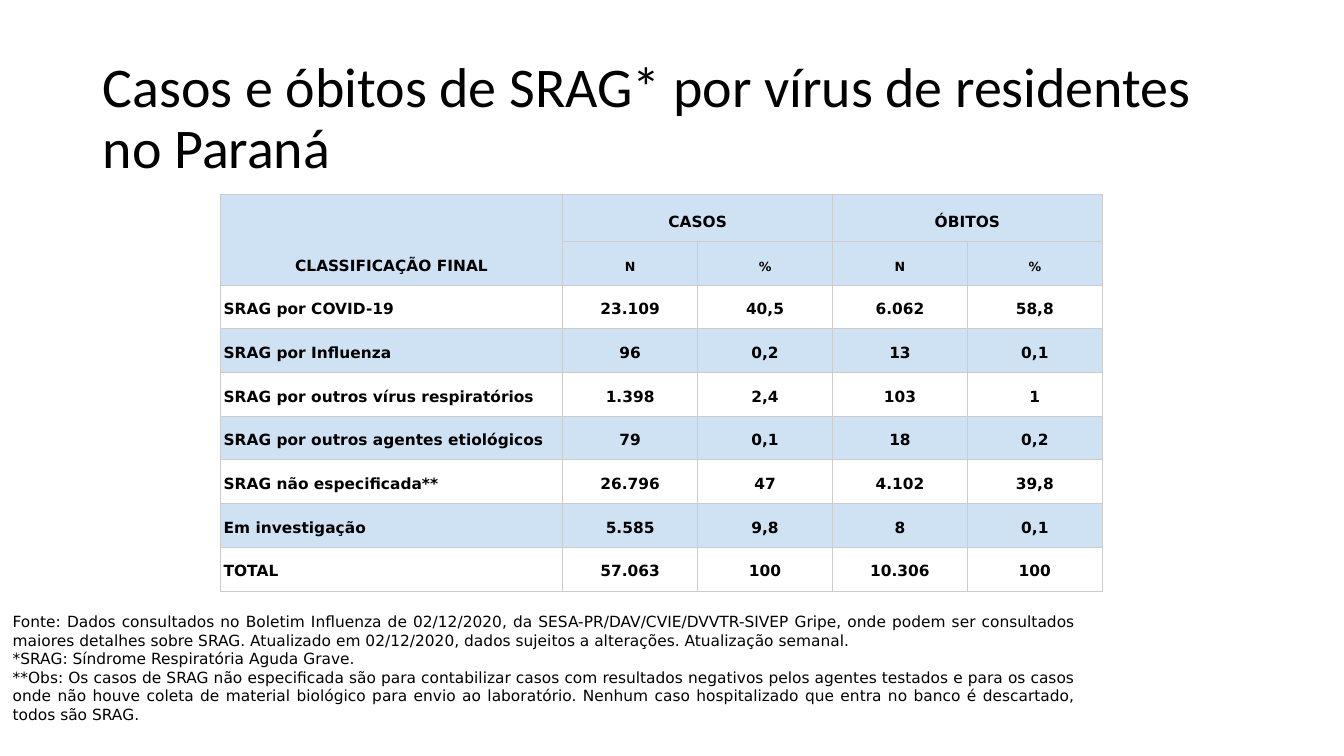
from lxml import etree
from pptx import Presentation
from pptx.dml.color import RGBColor
from pptx.enum.text import MSO_ANCHOR, PP_ALIGN
from pptx.oxml.ns import qn
from pptx.util import Pt

LEFT, CENTER, JUSTIFY = PP_ALIGN.LEFT, PP_ALIGN.CENTER, PP_ALIGN.JUSTIFY
MIDDLE, BOTTOM = MSO_ANCHOR.MIDDLE, MSO_ANCHOR.BOTTOM

EMU_PER_PX = 9525  # 96 px to the inch
COLORS = {"text": "000000", "band": "CFE2F3", "border": "CCCCCC"}
TITLE_FONT, BODY_FONT = "Calibri", "DejaVu Sans"

TITLE = "Casos e óbitos de SRAG* por vírus de residentes no Paraná"
HEADERS = [
    ["CLASSIFICAÇÃO FINAL", "CASOS", "", "ÓBITOS", ""],
    ["", "N", "%", "N", "%"],
]
CASES = [
    ["SRAG por COVID-19", "23.109", "40,5", "6.062", "58,8"],
    ["SRAG por Influenza", "96", "0,2", "13", "0,1"],
    ["SRAG por outros vírus respiratórios", "1.398", "2,4", "103", "1"],
    ["SRAG por outros agentes etiológicos", "79", "0,1", "18", "0,2"],
    ["SRAG não especificada**", "26.796", "47", "4.102", "39,8"],
    ["Em investigação", "5.585", "9,8", "8", "0,1"],
    ["TOTAL", "57.063", "100", "10.306", "100"],
]
NOTES = [
    "Fonte: Dados consultados no Boletim Influenza de 02/12/2020, da "
    "SESA-PR/DAV/CVIE/DVVTR-SIVEP Gripe, onde podem ser consultados maiores "
    "detalhes sobre SRAG. Atualizado em 02/12/2020, dados sujeitos a "
    "alterações. Atualização semanal.",
    "*SRAG: Síndrome Respiratória Aguda Grave.",
    "**Obs: Os casos de SRAG não especificada são para contabilizar casos com "
    "resultados negativos pelos agentes testados e para os casos onde não houve "
    "coleta de material biológico para envio ao laboratório. Nenhum caso "
    "hospitalizado que entra no banco é descartado, todos são SRAG.",
]


def px(n):
    return n * EMU_PER_PX


def write(tf, paragraphs, size=11, font=BODY_FONT, bold=False, align=LEFT, spacing=1.0):
    tf.word_wrap = True
    for i, text in enumerate(paragraphs):
        p = tf.add_paragraph() if i else tf.paragraphs[0]
        p.alignment = align
        p.line_spacing = spacing
        r = p.add_run()
        r.text = text
        r.font.size = Pt(size)
        r.font.name = font
        r.font.bold = bold
        r.font.color.rgb = RGBColor.from_string(COLORS["text"])


def set_margins(target, side, end):
    target.margin_left = target.margin_right = px(side)
    target.margin_top = target.margin_bottom = px(end)


def add_text(slide, box, paragraphs, anchor, margins, **text_format):
    tf = slide.shapes.add_textbox(*map(px, box)).text_frame
    tf.vertical_anchor = anchor
    set_margins(tf, *margins)
    write(tf, paragraphs, **text_format)


def add_borders(cell):
    tcPr = cell._tc.get_or_add_tcPr()
    for side in ("lnL", "lnR", "lnT", "lnB"):
        ln = etree.SubElement(tcPr, qn(f"a:{side}"), w=str(Pt(0.75)))
        fill = etree.SubElement(ln, qn("a:solidFill"))
        etree.SubElement(fill, qn("a:srgbClr"), val=COLORS["border"])


def add_cases_table(slide, box, label_width, header_height):
    x, y, w, h = map(px, box)
    rows = HEADERS + CASES
    n_rows, n_cols = len(rows), len(rows[0])
    table = slide.shapes.add_table(n_rows, n_cols, x, y, w, h).table
    table.first_row = table.horz_banding = False

    # Label column and top row are fixed; the others share the rest
    for i, col in enumerate(table.columns):
        col.width = (w - px(label_width)) // (n_cols - 1) if i else px(label_width)
    for i, row in enumerate(table.rows):
        row.height = (h - px(header_height)) // (n_rows - 1) if i else px(header_height)

    # Cells: both header rows and every second case row are shaded
    for i, row in enumerate(rows):
        is_header = i < len(HEADERS)
        for j, text in enumerate(row):
            cell = table.cell(i, j)
            cell.vertical_anchor = BOTTOM
            set_margins(cell, 3, 10)
            add_borders(cell)
            if is_header or i % 2:
                cell.fill.solid()
                cell.fill.fore_color.rgb = RGBColor.from_string(COLORS["band"])
            else:
                cell.fill.background()
            if text:
                write(cell.text_frame, [text], size=9 if i == 1 else 11, bold=True,
                      align=CENTER if is_header or j else LEFT, spacing=1.15)

    # Merged headers
    table.cell(0, 0).merge(table.cell(1, 0))
    for j in (1, 3):
        table.cell(0, j).merge(table.cell(0, j + 1))


def main():
    prs = Presentation()
    prs.slide_width, prs.slide_height = px(1280), px(720)
    slide = prs.slides.add_slide(prs.slide_layouts[6])

    add_text(slide, (88, 38, 1104, 139), [TITLE], BOTTOM, (10, 5),
             size=40, font=TITLE_FONT, spacing=0.9)
    add_text(slide, (2, 595, 1033, 82), NOTES, MIDDLE, (10, 10), align=JUSTIFY)
    add_cases_table(slide, (210, 185, 840, 378), label_width=326, header_height=45)

    prs.save("out.pptx")


if __name__ == "__main__":
    main()
